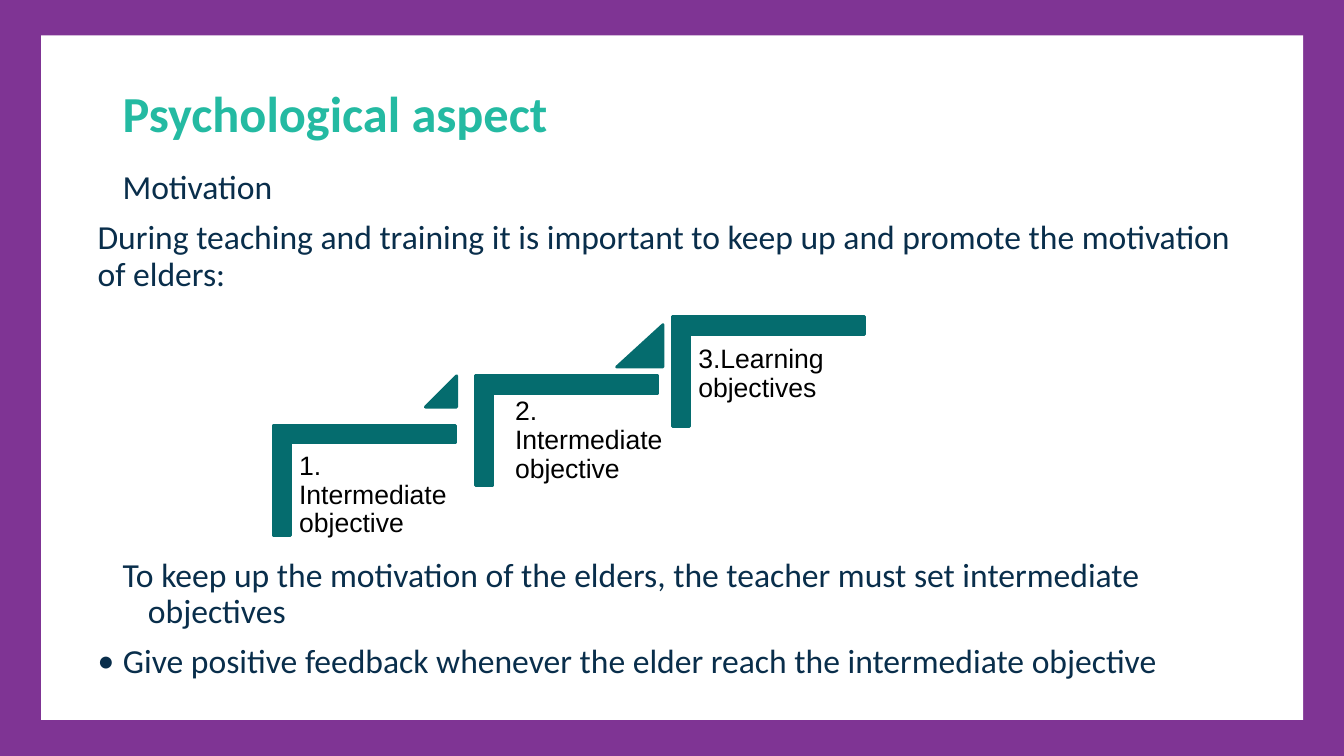
from lxml import etree
from pptx import Presentation
from pptx.dml.color import RGBColor
from pptx.enum.shapes import MSO_SHAPE
from pptx.oxml.ns import qn
from pptx.util import Cm, Pt

RECTANGLE = MSO_SHAPE.RECTANGLE
CORNER = MSO_SHAPE.CORNER
TRIANGLE = MSO_SHAPE.ISOSCELES_TRIANGLE

PURPLE, WHITE, BLACK = "7F3494", "FFFFFF", "000000"
TEAL, MINT, NAVY = "056C6E", "24BAA2", "092E4B"

SLIDE_WIDTH, SLIDE_HEIGHT = 33.87, 19.05
TEXT_LEFT, TEXT_WIDTH = 2.21, 29.44
STEP_HEIGHT, STEP_THICKNESS = 2.77, 0.161
LABEL_WIDTH, LABEL_HEIGHT = 4.17, 3.63

TITLE_FONT = {"name": "Calibri", "size": Pt(36), "bold": True}
BODY_FONT = {"name": "Calibri", "size": Pt(24)}
LABEL_FONT = {"name": "Arial", "size": Pt(19)}

# Left margin and first-line indent in cm
HANGING = (1.27, -0.64)
BULLETED = (0.64, -0.64)
FLUSH = (0, 0)

# Left, top and width of each step, left and top of its label, its wording
STEPS = [
    (6.88, 10.72, 4.6, 7.34, 11.2, "1. Intermediate objective"),
    (11.98, 9.47, 4.6, 12.78, 9.83, "2. Intermediate objective"),
    (16.94, 7.98, 4.85, 17.4, 8.51, "3.Learning objectives"),
]
# Left, top, width and height of the rises between the steps
RISES = [(10.72, 9.47, 0.79, 0.79), (15.54, 8.18, 1.17, 1.07)]


def colour(hex_value):
    return RGBColor.from_string(hex_value)


def set_format(target, values):
    for attribute, value in values.items():
        setattr(target, attribute, value)


def add_filled(slide, kind, left, top, width, height, fill, outlined=False):
    filled = slide.shapes.add_shape(kind, Cm(left), Cm(top), Cm(width), Cm(height))
    filled.shadow.inherit = False
    filled.fill.solid()
    filled.fill.fore_color.rgb = colour(fill)
    if outlined:
        filled.line.color.rgb = colour(fill)
        filled.line.width = Pt(2)
    else:
        filled.line.fill.background()
    return filled


def set_indent(paragraph, indent):
    properties = paragraph._p.get_or_add_pPr()
    for key, length in zip(("marL", "indent"), indent):
        properties.set(key, str(Cm(length)))
    if indent == BULLETED:
        etree.SubElement(properties, qn("a:buFont")).set("typeface", "Calibri")
        etree.SubElement(properties, qn("a:buChar")).set("char", "•")


def add_text(slide, box, paragraphs, font, hex_value, inset=(0.25, 0.13), before=10):
    frame = slide.shapes.add_textbox(*(Cm(length) for length in box)).text_frame
    side, end = (Cm(length) for length in inset)
    set_format(frame, {"word_wrap": True, "margin_left": side, "margin_right": side,
                       "margin_top": end, "margin_bottom": end})
    for index, (wording, indent) in enumerate(paragraphs):
        paragraph = frame.add_paragraph() if index else frame.paragraphs[0]
        set_format(paragraph, {"line_spacing": 0.9, "space_before": Pt(before)})
        set_indent(paragraph, indent)
        run = paragraph.add_run()
        run.text = wording
        set_format(run.font, font)
        run.font.color.rgb = colour(hex_value)


def add_step(slide, left, top, width, label_left, label_top, wording):
    # The corner lies on its side: its frame is turned about the centre
    shift = (width - STEP_HEIGHT) / 2
    step = add_filled(slide, CORNER, left + shift, top - shift,
                      STEP_HEIGHT, width, TEAL, outlined=True)
    step.rotation = 90
    for index in range(2):
        step.adjustments[index] = STEP_THICKNESS
    add_text(slide, (label_left, label_top, LABEL_WIDTH, LABEL_HEIGHT),
             [(wording, FLUSH)], LABEL_FONT, BLACK, inset=(0.2, 0.2), before=0)


def add_rise(slide, left, top, width, height):
    rise = add_filled(slide, TRIANGLE, left, top, width, height, TEAL, outlined=True)
    rise.adjustments[0] = 1


def main():
    presentation = Presentation()
    presentation.slide_width = Cm(SLIDE_WIDTH)
    presentation.slide_height = Cm(SLIDE_HEIGHT)
    slide = presentation.slides.add_slide(presentation.slide_layouts[6])

    # Purple border around a white panel
    add_filled(slide, RECTANGLE, 0, 0, SLIDE_WIDTH, SLIDE_HEIGHT, PURPLE)
    add_filled(slide, RECTANGLE, 1.04, 0.89, 31.8, 17.25, WHITE)

    # Title and introduction
    add_text(slide, (TEXT_LEFT, 2.11, TEXT_WIDTH, 2.06),
             [("Psychological aspect", HANGING)], TITLE_FONT, MINT)
    add_text(slide, (TEXT_LEFT, 4.17, TEXT_WIDTH, 3.4), [
        ("Motivation", HANGING),
        ("During teaching and training it is important to keep up and promote "
         "the motivation of elders:", FLUSH),
    ], BODY_FONT, NAVY)

    # Staircase of objectives
    for step in STEPS:
        add_step(slide, *step)
    for rise in RISES:
        add_rise(slide, *rise)

    # Advice for the teacher
    add_text(slide, (TEXT_LEFT, 13.94, TEXT_WIDTH, 3.4), [
        ("To keep up the motivation of the elders, the teacher must set "
         "intermediate objectives", HANGING),
        ("Give positive feedback whenever the elder reach the intermediate "
         "objective", BULLETED),
    ], BODY_FONT, NAVY)

    presentation.save("out.pptx")


if __name__ == "__main__":
    main()
